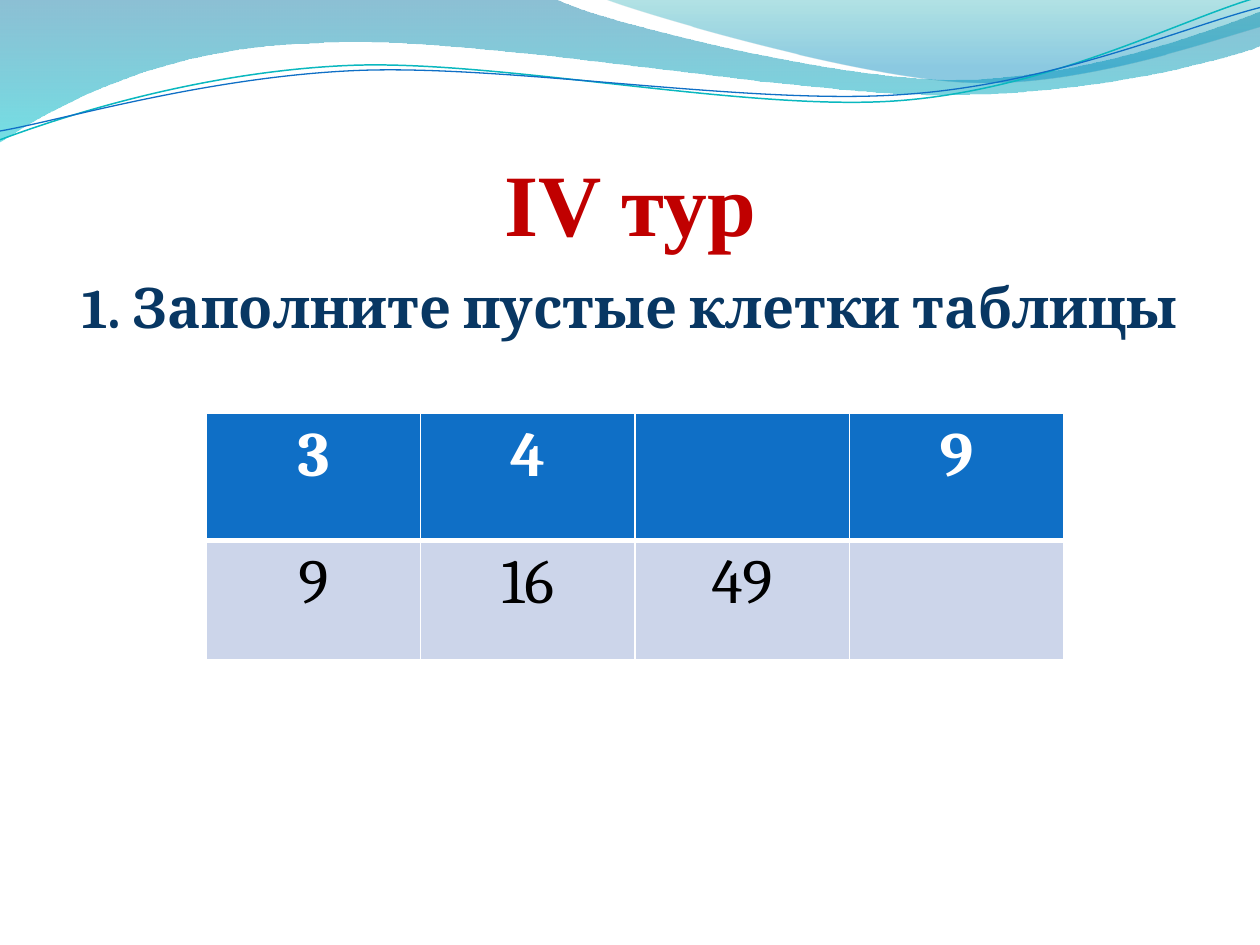
from lxml.etree import Element, SubElement
from pptx import Presentation
from pptx.dml.color import RGBColor
from pptx.enum.text import MSO_ANCHOR as ANCHOR, MSO_AUTO_SIZE as AUTO, PP_ALIGN as ALIGN
from pptx.oxml.ns import qn
from pptx.util import Cm, Pt


def rgb(hex_color):
    return RGBColor.from_string(hex_color)


def add_wave(shapes, segments, closed):
    ends = [seg[-2:] for seg in segments]
    left, top = min(x for x, _ in ends), min(y for _, y in ends)
    fb = shapes.build_freeform(*ends[0], scale=Cm(2.54) / 100)
    fb.add_line_segments(ends[1:], close=closed)
    sp = fb.convert_to_shape()
    sp.shadow.inherit = False
    lines = list(sp._element.spPr.iter(qn("a:lnTo")))
    for line, seg in zip(lines, segments[1:]):
        if len(seg) == 6:
            line.tag = qn("a:cubicBezTo")
            for i in (0, 2):
                pt = Element(qn("a:pt"), x=str(seg[i] - left), y=str(seg[i + 1] - top))
                line.insert(i // 2, pt)
    return sp


prs = Presentation()
prs.slide_width, prs.slide_height = Cm(25.4), Cm(19.05)
s = prs.slides.add_slide(prs.slide_layouts[5])

bands = [
    ([(0, 0), (440, -1), (476, 17, 664, 63, 758, 63), (853, 63, 958, 26, 1000, 9),
      (1001, 36), (983, 44, 870, 76, 746, 75), (622, 75, 382, 28, 257, 34),
      (129, 36, 46, 83, -1, 113)],
     [(0, "0074A1", 45), (1, "00C6CF", 55)]),
    ([(479, -1), (509, 11, 682, 62, 769, 65), (856, 69, 961, 32, 1000, 21), (1000, 0)],
     [(0, "00A1A9", 30), (0.8, "008BBF", 45)]),
]
for segments, stops in bands:
    sp = add_wave(s.shapes, segments, True)
    sp.line.fill.background()
    sp.fill.gradient()
    sp.fill.gradient_angle = 270
    for stop, (pos, color, _) in zip(sp.fill.gradient_stops, stops):
        stop.position = pos
        stop.color.rgb = rgb(color)
    for clr, (_, _, opacity) in zip(sp._element.spPr.iter(qn("a:srgbClr")), stops):
        SubElement(clr, qn("a:alpha"), val=str(opacity * 1000))

curves = [
    ([(0, 111), (48, 93, 158, 57, 277, 52), (395, 47, 593, 89, 713, 80),
      (833, 71, 938, 15, 998, -2)], "0AB8BF", 0.85),
    ([(0, 104), (47, 96, 164, 61, 283, 56), (403, 51, 597, 84, 717, 75),
      (836, 67, 941, 21, 1000, 6)], "0F6FC6", 0.75),
]
for segments, color, width in curves:
    sp = add_wave(s.shapes, segments, False)
    sp.fill.background()
    sp.line.color.rgb = rgb(color)
    sp.line.width = Pt(width)

title = s.shapes.title
s.shapes._spTree.append(title._element)
title.left, title.top, title.width, title.height = Cm(1.27), Cm(1.95), Cm(22.86), Cm(3.17)
task = s.shapes.add_textbox(Cm(1.27), Cm(5.37), Cm(22.86), Cm(12.19))

texts = [
    (title, "IV тур", "Times New Roman", 50, "C00000", ANCHOR.BOTTOM),
    (task, "1. Заполните пустые клетки таблицы", "Cambria", 32, "083763", ANCHOR.TOP),
]
for sp, text, font, size, color, anchor in texts:
    tf = sp.text_frame
    tf.text = text
    tf.word_wrap = True
    tf.auto_size = AUTO.NONE
    tf.vertical_anchor = anchor
    p = tf.paragraphs[0]
    p.alignment = ALIGN.CENTER
    p.font.name, p.font.size, p.font.bold = font, Pt(size), True
    p.font.color.rgb = rgb(color)
title.text_frame.margin_left = title.text_frame.margin_right = 0
title.text_frame.margin_bottom = 0

rows = [
    (["3", "4", "", "9"], 2.57, "0F6FC6", "FFFFFF", True, {"L": 1, "R": 1, "T": 1, "B": 3}),
    (["9", "16", "49", ""], 2.39, "CCD5EA", "000000", False, {"L": 1, "R": 1, "T": 3, "B": 1}),
]
table = s.shapes.add_table(2, 4, Cm(4.16), Cm(8.33), Cm(17.28), Cm(4.96)).table
for r, (values, height, fill, color, bold, borders) in enumerate(rows):
    table.rows[r].height = Cm(height)
    for c, value in enumerate(values):
        cell = table.cell(r, c)
        tcPr = cell._tc.get_or_add_tcPr()
        for side, width in borders.items():
            ln = SubElement(tcPr, qn(f"a:ln{side}"), w=str(Pt(width)))
            SubElement(SubElement(ln, qn("a:solidFill")), qn("a:srgbClr"), val="FFFFFF")
        cell.fill.solid()
        cell.fill.fore_color.rgb = rgb(fill)
        cell.text = value
        p = cell.text_frame.paragraphs[0]
        p.alignment = ALIGN.CENTER
        p.font.name, p.font.size, p.font.bold = "Cambria", Pt(36), bold
        p.font.color.rgb = rgb(color)

prs.save("out.pptx")
